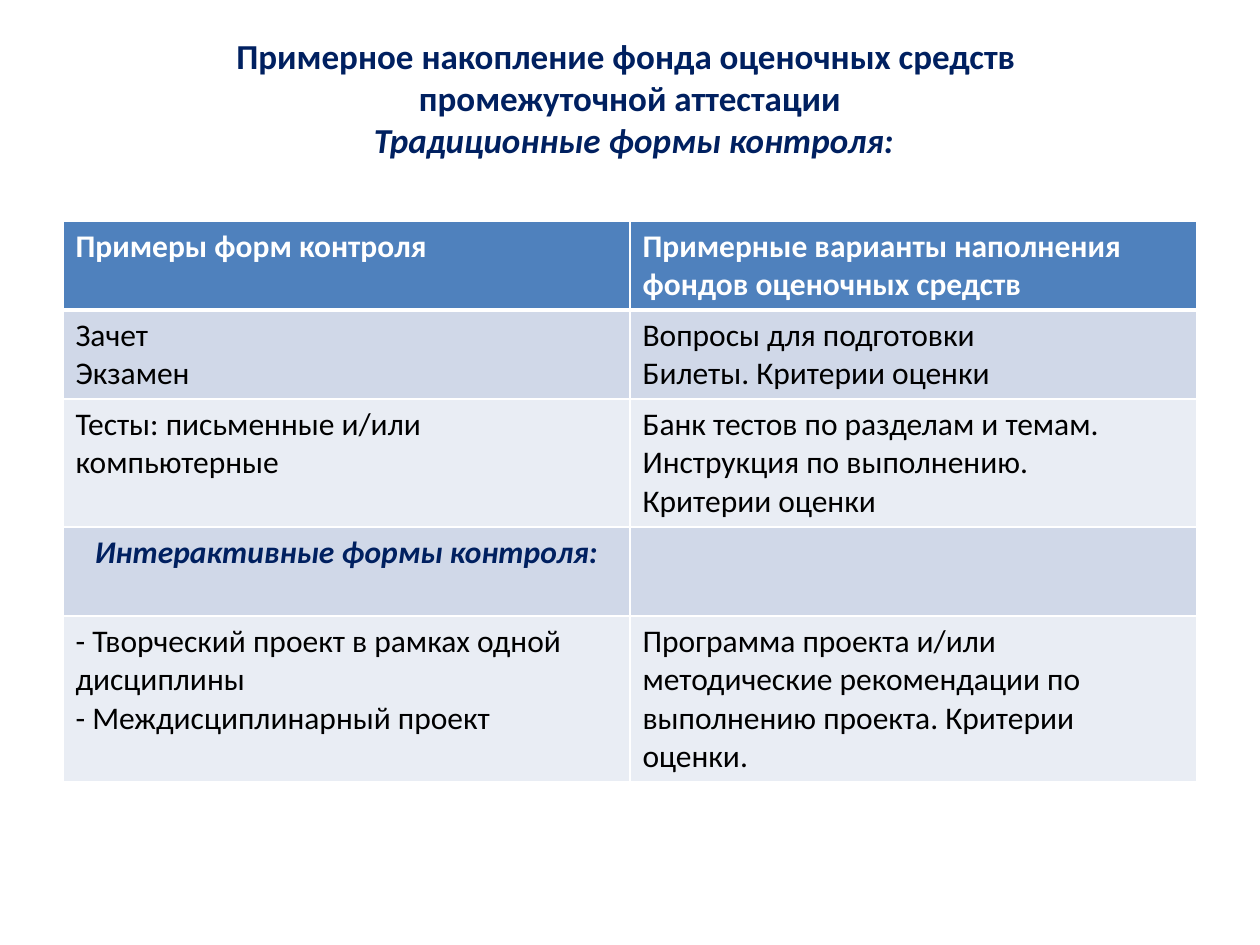
from dataclasses import dataclass

import lxml.etree
import pptx
import pptx.dml.color
import pptx.enum.text
import pptx.oxml.ns
import pptx.util

ALIGN = pptx.enum.text.PP_ALIGN


@dataclass(frozen=True)
class Theme:
    font: str = "Calibri"
    title_size: int = 20
    cell_size: int = 18
    navy: str = "002060"
    black: str = "000000"
    white: str = "FFFFFF"
    header_fill: str = "4F81BD"
    band_fills: tuple[str, str] = ("D0D8E8", "E9EDF4")
    rule_width: int = 1
    header_rule_width: int = 3


@dataclass(frozen=True)
class TextStyle:
    size: int
    color: str
    bold: bool = False
    italic: bool = False
    align: ALIGN = ALIGN.LEFT


@dataclass(frozen=True)
class Row:
    left: str
    right: str
    height: int
    style: TextStyle


THEME = Theme()
TITLE = TextStyle(THEME.title_size, THEME.navy, bold=True, align=ALIGN.CENTER)
SUBTITLE = TextStyle(THEME.title_size, THEME.navy, bold=True, italic=True, align=ALIGN.CENTER)
HEADER = TextStyle(THEME.cell_size, THEME.white, bold=True)
BODY = TextStyle(THEME.cell_size, THEME.black)
SECTION = TextStyle(THEME.cell_size, THEME.navy, bold=True, italic=True, align=ALIGN.CENTER)

TITLE_LINES = (
    ("Примерное накопление фонда оценочных средств \nпромежуточной аттестации", TITLE),
    ("\u00a0Традиционные формы контроля:".replace("\u00a0", " "), SUBTITLE),
)
ROWS = (
    Row("Примеры форм контроля",
        "Примерные варианты наполнения фондов оценочных средств", 89, HEADER),
    Row("Зачет\nЭкзамен", "Вопросы для подготовки\nБилеты. Критерии оценки", 89, BODY),
    Row("Тесты: письменные и/или компьютерные",
        "Банк тестов по разделам и темам.\nИнструкция по выполнению.\nКритерии оценки", 128, BODY),
    Row("Интерактивные формы контроля:", "", 89, SECTION),
    Row("- Творческий проект в рамках одной дисциплины\n- Междисциплинарный проект",
        "Программа проекта и/или методические рекомендации по выполнению проекта. "
        "Критерии оценки.", 166, BODY),
)


def px(length: int) -> pptx.util.Emu:
    return pptx.util.Emu(round(length * 914400 / 126))


def rgb(color: str) -> pptx.dml.color.RGBColor:
    return pptx.dml.color.RGBColor.from_string(color)


def set_all(target, values: dict) -> None:
    for name, value in values.items():
        setattr(target, name, value)


def write(para, text: str, style: TextStyle) -> None:
    """Fill a paragraph, turning each newline into a line break."""
    para.alignment = style.align
    for number, line in enumerate(text.split("\n")):
        if number:
            para.add_line_break()
        span = para.add_run()
        span.text = line
        set_all(span.font, {
            "name": THEME.font,
            "size": pptx.util.Pt(style.size),
            "bold": style.bold,
            "italic": style.italic,
        })
        span.font.color.rgb = rgb(style.color)


def draw_title(page) -> None:
    box = page.shapes.add_textbox(px(63), px(38), px(1134), px(158))
    frame = box.text_frame
    set_all(frame, {
        "word_wrap": True,
        "vertical_anchor": pptx.enum.text.MSO_ANCHOR.MIDDLE,
        "margin_top": 0,
        "margin_bottom": px(40),
    })
    for number, (text, style) in enumerate(TITLE_LINES):
        para = frame.add_paragraph() if number else frame.paragraphs[0]
        write(para, text, style)


def add_borders(cell, top: int, bottom: int) -> None:
    properties = cell._tc.get_or_add_tcPr()
    widths = {"L": THEME.rule_width, "R": THEME.rule_width, "T": top, "B": bottom}
    for side, width in widths.items():
        line = lxml.etree.SubElement(
            properties, pptx.oxml.ns.qn(f"a:ln{side}"), w=str(pptx.util.Pt(width)))
        fill = lxml.etree.SubElement(line, pptx.oxml.ns.qn("a:solidFill"))
        lxml.etree.SubElement(fill, pptx.oxml.ns.qn("a:srgbClr"), val=THEME.white)


def draw_table(page) -> None:
    height = sum(row.height for row in ROWS)
    table = page.shapes.add_table(
        len(ROWS), 2, px(63), px(221), px(1134), px(height)).table
    set_all(table, {"first_row": False, "horz_banding": False})
    for index, row in enumerate(ROWS):
        table.rows[index].height = px(row.height)
        color = THEME.band_fills[(index - 1) % 2] if index else THEME.header_fill
        top = THEME.header_rule_width if index == 1 else THEME.rule_width
        bottom = THEME.header_rule_width if index == 0 else THEME.rule_width
        for column, text in enumerate((row.left, row.right)):
            cell = table.cell(index, column)
            add_borders(cell, top, bottom)
            cell.fill.solid()
            cell.fill.fore_color.rgb = rgb(color)
            if text:
                write(cell.text_frame.paragraphs[0], text, row.style)


def main() -> None:
    deck = pptx.Presentation()
    set_all(deck, {"slide_width": px(1260), "slide_height": px(945)})
    page = deck.slides.add_slide(deck.slide_layouts[6])
    draw_title(page)
    draw_table(page)
    deck.save("out.pptx")


if __name__ == "__main__":
    main()
